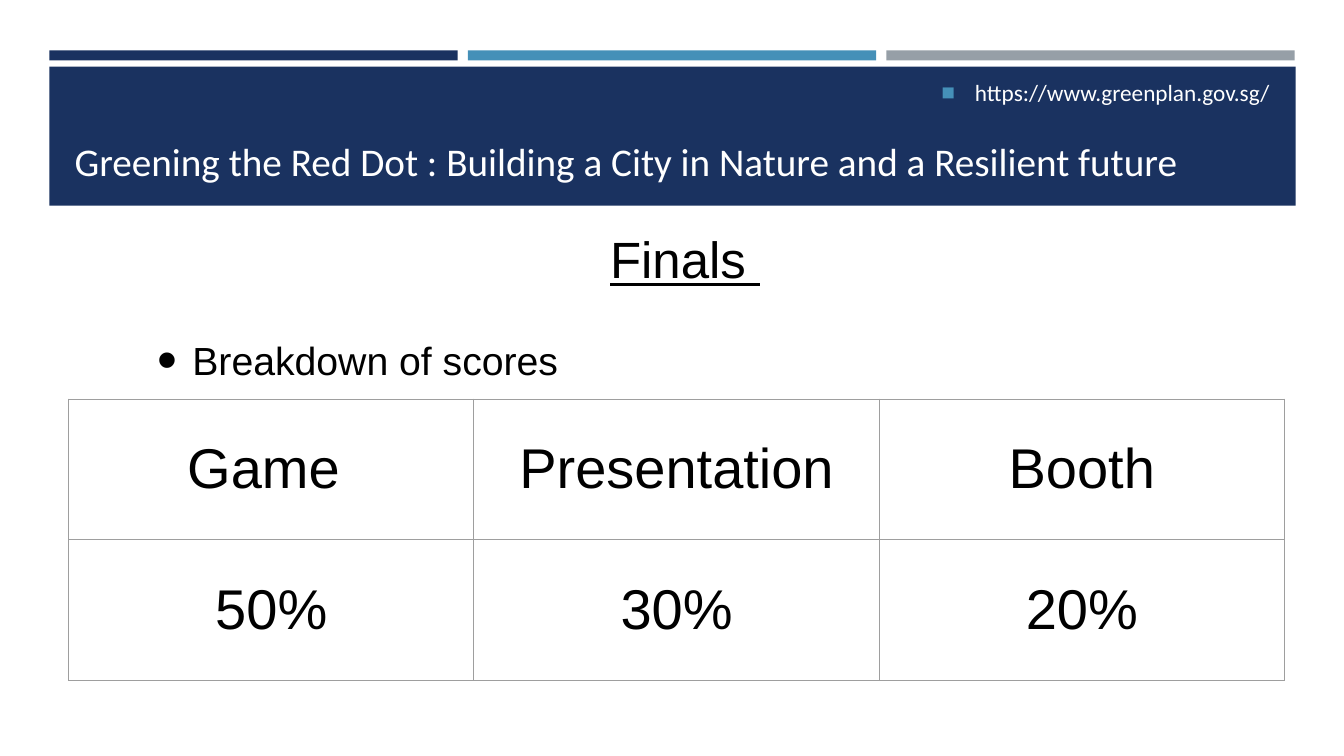
"""Build the finals score slide with its banner, heading, bullet and score table."""
from dataclasses import dataclass

from lxml import etree
from pptx import Presentation
from pptx import util as u
from pptx.dml import color
from pptx.enum import shapes, text
from pptx.oxml import ns

PX = 9144
NAVY, BLUE, GREY, WHITE, BLACK, RULE = "1A3260", "4590B8", "969FA7", "FFFFFF", "000000", "9E9E9E"
SCORES = [("Game ", "50%"), ("Presentation", "30%"), ("Booth", "20%")]


@dataclass(frozen=True)
class Box:
    left: int
    top: int
    width: int
    height: int

    def emu(self) -> list[int]:
        return [v * PX for v in (self.left, self.top, self.width, self.height)]


@dataclass(frozen=True)
class Band:
    box: Box
    fill: str


@dataclass(frozen=True)
class Style:
    font: str
    size: float
    color: str
    underline: bool = False


BANDS = [Band(Box(49 + 415 * i, 50, 405, 10), fill) for i, fill in enumerate((NAVY, BLUE, GREY))]
BANDS.append(Band(Box(49, 66, 1236, 138), NAVY))


def rgb(value: str) -> color.RGBColor:
    return color.RGBColor.from_string(value)


def add_band(slide, band: Band) -> None:
    bar = slide.shapes.add_shape(shapes.MSO_SHAPE.RECTANGLE, *band.box.emu())
    bar.shadow.inherit = False
    bar.fill.solid()
    bar.fill.fore_color.rgb = rgb(band.fill)
    bar.line.fill.background()


def add_run(paragraph, wording: str, style: Style) -> None:
    run = paragraph.add_run()
    run.text = wording
    run.font.name = style.font
    run.font.size = u.Pt(style.size)
    run.font.color.rgb = rgb(style.color)
    run.font.underline = style.underline


def set_frame(holder, box: Box, anchor, inset_y: int):
    """Place a text holder and return its first paragraph."""
    holder.left, holder.top, holder.width, holder.height = box.emu()
    frame = holder.text_frame
    frame.word_wrap = True
    frame.auto_size = text.MSO_AUTO_SIZE.NONE
    frame.vertical_anchor = anchor
    frame.margin_left = frame.margin_right = 10 * PX
    frame.margin_top = frame.margin_bottom = inset_y * PX
    paragraph = frame.paragraphs[0]
    paragraph.alignment = text.PP_ALIGN.LEFT
    paragraph.space_before = u.Pt(0)
    return paragraph


def set_margins(paragraph, left: int, indent: int = 0, right: int = 0) -> None:
    props = paragraph._p.get_or_add_pPr()
    for key, value in (("marL", left), ("marR", right), ("indent", indent)):
        props.set(key, str(value * PX))


def add_bullet(paragraph, char: str, fill: str, percent: int) -> None:
    props = paragraph._p.get_or_add_pPr()
    tint = etree.SubElement(props, ns.qn("a:buClr"))
    etree.SubElement(tint, ns.qn("a:srgbClr"), val=fill)
    etree.SubElement(props, ns.qn("a:buSzPct"), val=str(percent * 1000))
    etree.SubElement(props, ns.qn("a:buFont"), typeface="Arial")
    etree.SubElement(props, ns.qn("a:buChar"), char=char)


def fill_cell(cell, wording: str, style: Style) -> None:
    cell.margin_left = cell.margin_right = cell.margin_top = cell.margin_bottom = 10 * PX
    cell.vertical_anchor = text.MSO_ANCHOR.MIDDLE
    props = cell._tc.get_or_add_tcPr()
    for side in ("lnL", "lnR", "lnT", "lnB"):
        line = etree.SubElement(props, ns.qn(f"a:{side}"), w=str(u.Pt(0.75)))
        solid = etree.SubElement(line, ns.qn("a:solidFill"))
        etree.SubElement(solid, ns.qn("a:srgbClr"), val=RULE)
    cell.fill.background()
    paragraph = cell.text_frame.paragraphs[0]
    paragraph.alignment = text.PP_ALIGN.CENTER
    add_run(paragraph, wording, style)


def add_scores(slide, box: Box) -> None:
    scores = slide.shapes.add_table(2, len(SCORES), *box.emu()).table
    scores.first_row = scores.horz_banding = False
    for col, pair in enumerate(SCORES):
        for row, wording in enumerate(pair):
            fill_cell(scores.cell(row, col), wording, Style("Arial", 40, BLACK))


def main() -> None:
    deck = Presentation()
    deck.slide_width, deck.slide_height = 1333 * PX, 750 * PX
    slide = deck.slides.add_slide(deck.slide_layouts[1])
    title, link = slide.placeholders
    for band in BANDS:
        add_band(slide, band)
    tree = slide.shapes._spTree
    for holder in (title, link):
        tree.append(holder._element)

    theme = set_frame(title, Box(64, 80, 1206, 108), text.MSO_ANCHOR.BOTTOM, 5)
    add_run(theme, "Greening the Red Dot : Building a City in Nature and a Resilient future",
            Style("Calibri", 28, WHITE))

    address = set_frame(link, Box(924, 65, 354, 52), text.MSO_ANCHOR.MIDDLE, 5)
    set_margins(address, 33, -33)
    add_bullet(address, "◼", BLUE, 92)
    add_run(address, "https://www.greenplan.gov.sg/", Style("Calibri", 16.6, WHITE))

    heading_box = Box(108, 216, 1117, 81)
    heading = set_frame(slide.shapes.add_textbox(*heading_box.emu()), heading_box,
                        text.MSO_ANCHOR.TOP, 10)
    heading.alignment = text.PP_ALIGN.CENTER
    set_margins(heading, 203, right=177)
    add_run(heading, "Finals ", Style("Arial", 36.4, BLACK, underline=True))

    breakdown_box = Box(33, 304, 1253, 141)
    breakdown = set_frame(slide.shapes.add_textbox(*breakdown_box.emu()), breakdown_box,
                          text.MSO_ANCHOR.TOP, 30)
    set_margins(breakdown, 148, -35)
    add_bullet(breakdown, "•", BLACK, 145)
    add_run(breakdown, "Breakdown of scores", Style("Arial", 28, BLACK))

    add_scores(slide, Box(68, 396, 1206, 279))
    deck.save("out.pptx")


if __name__ == "__main__":
    main()
